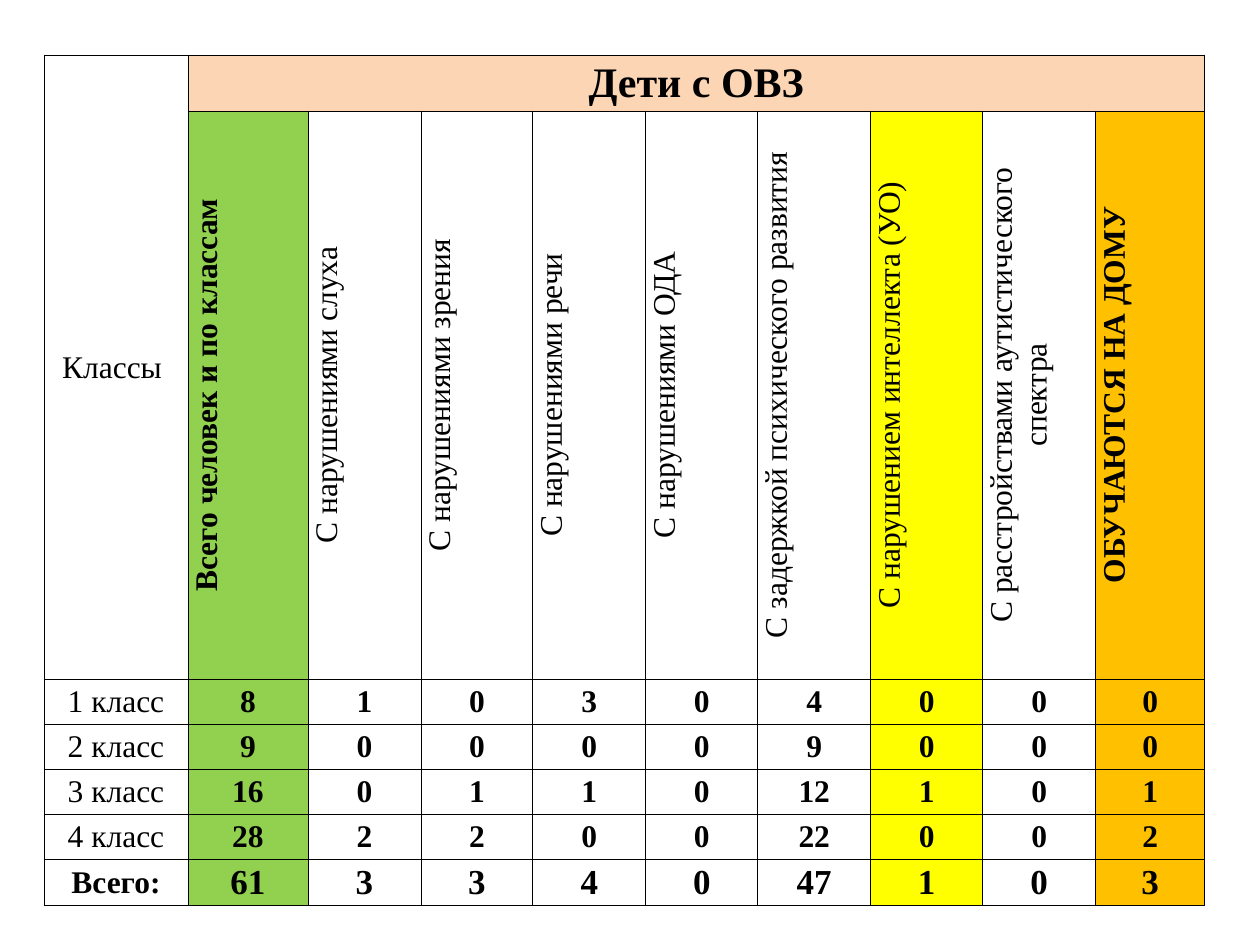
from lxml.etree import SubElement as Sub
from pptx import Presentation
from pptx.dml.color import RGBColor as RGB
from pptx.enum.text import MSO_ANCHOR as Anchor, PP_ALIGN as Align
from pptx.oxml.ns import qn
from pptx.util import Emu, Pt

BLACK = RGB(0, 0, 0)
PEACH = RGB(0xFC, 0xD5, 0xB5)
GREEN = RGB(0x92, 0xD0, 0x50)
YELLOW = RGB(0xFF, 0xFF, 0)
ORANGE = RGB(0xFF, 0xC0, 0)
FILLS = {1: GREEN, 7: YELLOW, 9: ORANGE}


def px(n):
    return Emu(round(n * 914400 / 126))


def border(cell):
    props = cell._tc.get_or_add_tcPr()
    for side in "LRTB":
        line = Sub(props, qn("a:ln" + side), w=str(Pt(0.5)))
        fill = Sub(line, qn("a:solidFill"))
        Sub(fill, qn("a:srgbClr"), val=str(BLACK))


widths = [144, 120] + [113, 112] * 3 + [113, 109]
heights = [56, 568] + [45] * 4 + [46]
rows = [
    ["Классы ", "Дети с ОВЗ"] + [""] * 8,
    ["", "Всего человек и по классам", "С нарушениями слуха",
     "С нарушениями зрения", "С нарушениями речи", "С нарушениями ОДА",
     "С задержкой психического развития", "С нарушением интеллекта (УО)",
     "С расстройствами аутистического спектра", "ОБУЧАЮТСЯ НА ДОМУ"],
    ["1 класс", 8, 1, 0, 3, 0, 4, 0, 0, 0],
    ["2 класс", 9, 0, 0, 0, 0, 9, 0, 0, 0],
    ["3 класс", 16, 0, 1, 1, 0, 12, 1, 0, 1],
    ["4 класс", 28, 2, 2, 0, 0, 22, 0, 0, 2],
    ["Всего:", 61, 3, 3, 4, 0, 47, 1, 0, 3],
]
last = len(rows) - 1

deck = Presentation()
deck.slide_width, deck.slide_height = px(1260), px(945)
slide = deck.slides.add_slide(deck.slide_layouts[6])
table = slide.shapes.add_table(
    len(rows), len(widths), px(44), px(55), px(sum(widths)), px(sum(heights))
).table
table.first_row = table.horz_banding = False
for col, width in zip(table.columns, widths):
    col.width = px(width)
for row, height in zip(table.rows, heights):
    row.height = px(height)

for r, row in enumerate(rows):
    for c, text in enumerate(row):
        cell = table.cell(r, c)
        border(cell)
        color = PEACH if r == 0 and c else FILLS.get(c)
        if color:
            cell.fill.solid()
            cell.fill.fore_color.rgb = color
        else:
            cell.fill.background()
        cell.vertical_anchor = Anchor.MIDDLE
        cell.margin_left = cell.margin_right = cell.margin_top = px(1)
        cell.margin_bottom = 0
        if r == 1 and c:
            cell._tc.get_or_add_tcPr().set("vert", "vert270")
        cell.text = str(text)
        para = cell.text_frame.paragraphs[0]
        para.alignment = Align.CENTER
        font = para.font
        font.name = "Times New Roman"
        font.color.rgb = BLACK
        font.bold = c in (1, 9) or (r != 1 and c > 0) or r == last
        font.size = Pt(24 if r == 0 and c else 20 if r == last and c else 18)

table.cell(0, 0).merge(table.cell(1, 0))
table.cell(0, 1).merge(table.cell(0, 9))
deck.save("out.pptx")
